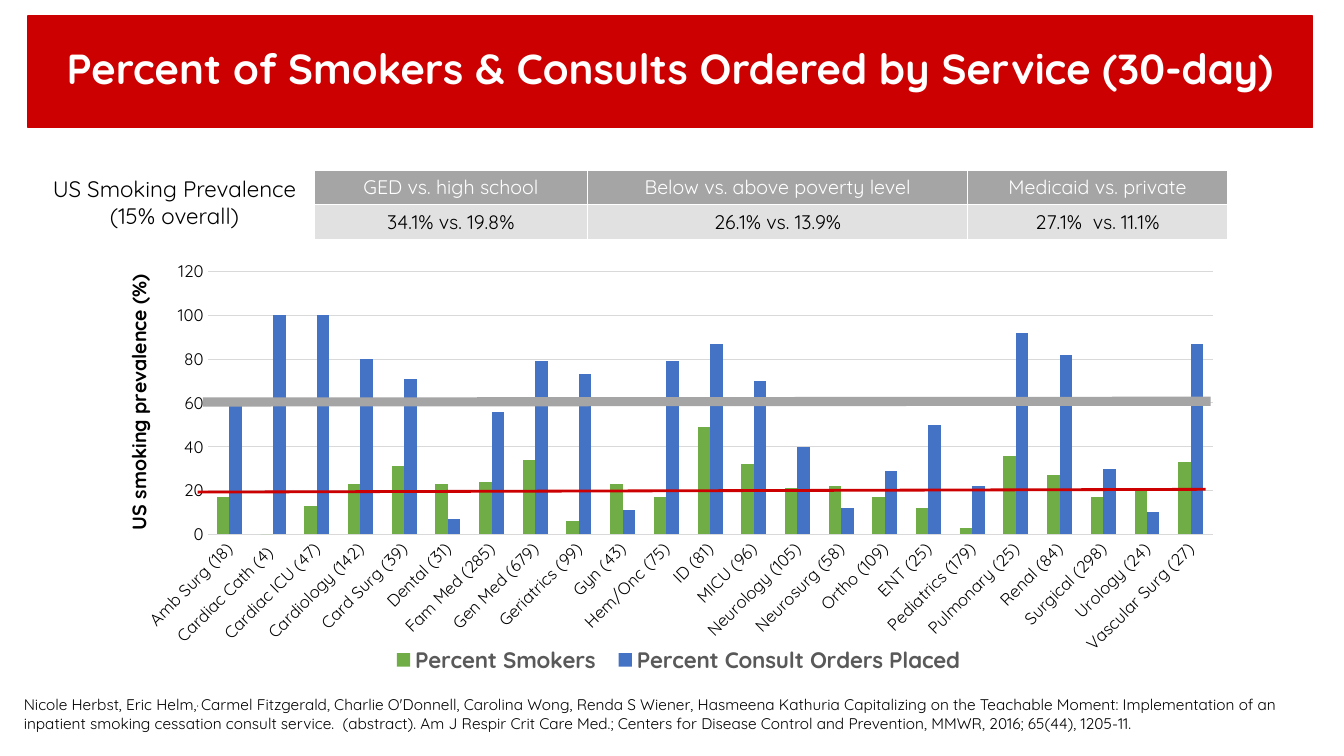
import lxml.etree
import pptx
import pptx.chart.data
import pptx.dml.color
import pptx.enum.chart
import pptx.enum.shapes
import pptx.enum.text
import pptx.oxml.ns
import pptx.util

Cm = pptx.util.Cm
Pt = pptx.util.Pt
RGBColor = pptx.dml.color.RGBColor
qn = pptx.oxml.ns.qn

RED = RGBColor(0xCC, 0x00, 0x00)
WHITE = RGBColor(0xFF, 0xFF, 0xFF)
BLACK = RGBColor(0x00, 0x00, 0x00)
GRAY = RGBColor(0xA5, 0xA5, 0xA5)
LIGHT_GRAY = RGBColor(0xE1, 0xE1, 0xE1)
GRID_GRAY = RGBColor(0xD9, 0xD9, 0xD9)
LEGEND_GRAY = RGBColor(0x59, 0x59, 0x59)
GREEN = RGBColor(0x70, 0xAD, 0x47)
BLUE = RGBColor(0x44, 0x72, 0xC4)
FONT = "Quicksand"
CENTER = pptx.enum.text.PP_ALIGN.CENTER
LEFT = pptx.enum.text.PP_ALIGN.LEFT
CHART_WIDTH = Cm(28.02)
CHART_HEIGHT = Cm(11.48)

SERVICES = [
    ("Amb Surg (18)", 17, 62), ("Cardiac Cath (4) ", 0, 100),
    ("Cardiac ICU (47)", 13, 100), ("Cardiology (142)", 23, 80),
    ("Card Surg (39)", 31, 71), ("Dental (31)", 23, 7),
    ("Fam Med (285)", 24, 56), ("Gen Med (679)", 34, 79),
    ("Geriatrics (99)", 6, 73), ("Gyn (43)", 23, 11),
    ("Hem/Onc (75)", 17, 79), ("ID (81)", 49, 87),
    ("MICU (96)", 32, 70), ("Neurology (105)", 21, 40),
    ("Neurosurg (58)", 22, 12), ("Ortho (109)", 17, 29),
    ("ENT (25)", 12, 50), ("Pediatrics (179)", 3, 22),
    ("Pulmonary (25)", 36, 92), ("Renal (84)", 27, 82),
    ("Surgical (298)", 17, 30), ("Urology (24)", 21, 10),
    ("Vascular Surg (27)", 33, 87),
]


def write_text(text_frame, text, size, color=BLACK, bold=False, align=CENTER):
    """Fill the frame with one paragraph per line; superscripts stand between carets."""
    text_frame.word_wrap = True
    for index, line in enumerate(text.split("\n")):
        paragraph = text_frame.paragraphs[0] if index == 0 else text_frame.add_paragraph()
        paragraph.alignment = align
        for part, words in enumerate(line.split("^")):
            run = paragraph.add_run()
            run.text = words
            run.font.name = FONT
            run.font.size = Pt(size)
            run.font.bold = bold
            run.font.color.rgb = color
            if part % 2:
                run.font._element.set("baseline", "30000")


def set_layout(chart_part, left, top, width, height):
    """Place a plot area or legend by lengths from the chart's corner."""
    for old_layout in chart_part.findall(qn("c:layout")):
        chart_part.remove(old_layout)
    layout = lxml.etree.Element(qn("c:layout"))
    manual = lxml.etree.SubElement(layout, qn("c:manualLayout"))
    if chart_part.tag == qn("c:plotArea"):
        lxml.etree.SubElement(manual, qn("c:layoutTarget"), val="inner")
        chart_part.insert(0, layout)
    else:
        chart_part.find(qn("c:legendPos")).addnext(layout)
    for mode in ("xMode", "yMode"):
        lxml.etree.SubElement(manual, qn("c:" + mode), val="edge")
    for name, length, whole in (("x", left, CHART_WIDTH), ("y", top, CHART_HEIGHT),
                                ("w", width, CHART_WIDTH), ("h", height, CHART_HEIGHT)):
        lxml.etree.SubElement(manual, qn("c:" + name), val=str(length / whole))


presentation = pptx.Presentation()
presentation.slide_width = Cm(33.87)
presentation.slide_height = Cm(19.05)
slide = presentation.slides.add_slide(presentation.slide_layouts[5])

# Title banner
title = slide.shapes.title
title.left, title.top, title.width, title.height = Cm(0.71), Cm(0.4), Cm(32.36), Cm(2.82)
title.fill.solid()
title.fill.fore_color.rgb = RED
title.line.color.rgb = RED
title.line.width = Pt(1)
title.text_frame.margin_bottom = Cm(0.18)
title.text_frame.vertical_anchor = pptx.enum.text.MSO_ANCHOR.MIDDLE
write_text(title.text_frame, "Percent of Smokers & Consults Ordered by Service (30-day)",
           30, color=WHITE, bold=True)
title.text_frame.paragraphs[0].line_spacing = 0.9

# Chart of services
chart_data = pptx.chart.data.CategoryChartData()
names, smokers, consults = zip(*SERVICES)
chart_data.categories = names
chart_data.add_series("Percent Smokers ", smokers)
chart_data.add_series("Percent Consult Orders Placed", consults)
chart = slide.shapes.add_chart(
    pptx.enum.chart.XL_CHART_TYPE.COLUMN_CLUSTERED,
    Cm(3.07), Cm(6.35), CHART_WIDTH, CHART_HEIGHT, chart_data).chart
chart.has_title = False
chart.font.name = FONT
chart.font.size = Pt(12)
chart.font.color.rgb = BLACK
plot = chart.plots[0]
plot.gap_width = 150
plot.overlap = 0
plot.vary_by_categories = False
for series, color in zip(plot.series, (GREEN, BLUE)):
    series.format.fill.solid()
    series.format.fill.fore_color.rgb = color
    series.invert_if_negative = False

for axis in (chart.category_axis, chart.value_axis):
    axis.major_tick_mark = pptx.enum.chart.XL_TICK_MARK.NONE
    axis.minor_tick_mark = pptx.enum.chart.XL_TICK_MARK.NONE
    axis.format.line.fill.background()
    axis.tick_labels.font.name = FONT
    axis.tick_labels.font.size = Pt(12)
    axis.tick_labels.font.color.rgb = BLACK
label_body = chart.category_axis._element.find(qn("c:txPr")).find(qn("a:bodyPr"))
label_body.set("rot", "-2700000")
label_body.set("vert", "horz")
chart.value_axis.minimum_scale = 0
chart.value_axis.maximum_scale = 120
chart.value_axis.major_unit = 20
gridline = chart.value_axis.major_gridlines.format.line
gridline.color.rgb = GRID_GRAY
gridline.width = Pt(0.75)

chart.has_legend = True
legend = chart.legend
legend.position = pptx.enum.chart.XL_LEGEND_POSITION.BOTTOM
legend.include_in_layout = False
legend.font.name = FONT
legend.font.size = Pt(16)
legend.font.bold = True
legend.font.color.rgb = LEGEND_GRAY
set_layout(chart._chartSpace.chart.plotArea, Cm(2.16), Cm(0.49), Cm(25.33), Cm(6.63))
set_layout(legend._element, Cm(6.7), Cm(9.79), Cm(14.66), Cm(0.98))

# Average lines and axis caption
AVERAGES = [
    (4.98, 12.4, 30.38, 12.33, RED, 2),
    (5.11, 10.13, 30.51, 10.11, GRAY, 6.5),
]
for left, start, right, end, color, width in AVERAGES:
    average = slide.shapes.add_connector(
        pptx.enum.shapes.MSO_CONNECTOR.STRAIGHT, Cm(left), Cm(start), Cm(right), Cm(end))
    average.line.color.rgb = color
    average.line.width = Pt(width)
    lxml.etree.SubElement(average._element.spPr, qn("a:effectLst"))

caption = slide.shapes.add_textbox(Cm(3.07), Cm(6.54), Cm(1.12), Cm(7.19))
write_text(caption.text_frame, "US smoking prevalence (%)", 14, bold=True)
caption.text_frame._txBody.bodyPr.set("vert", "vert270")

# Prevalence table
PREVALENCE = [
    ("GED vs. high school", "Below vs. above poverty level", "Medicaid vs. private"),
    ("34.1% vs. 19.8%", "26.1% vs. 13.9%", "27.1%  vs. 11.1%"),
]
ROW_COLORS = [(GRAY, WHITE), (LIGHT_GRAY, BLACK)]
table = slide.shapes.add_table(2, 3, Cm(7.92), Cm(4.29), Cm(23.01), Cm(1.74)).table
for column, width in zip(table.columns, (6.89, 9.58, 6.54)):
    column.width = Cm(width)
for row, texts, (fill_color, text_color) in zip(table.rows, PREVALENCE, ROW_COLORS):
    row.height = Cm(0.87)
    for cell, text in zip(row.cells, texts):
        cell.margin_top = cell.margin_bottom = Cm(0.08)
        cell.vertical_anchor = pptx.enum.text.MSO_ANCHOR.MIDDLE
        write_text(cell.text_frame, text, 14, color=text_color)
        properties = cell._tc.get_or_add_tcPr()
        for side in ("lnL", "lnR", "lnT", "lnB"):
            border = lxml.etree.SubElement(properties, qn("a:" + side), w=str(Pt(1)))
            border_fill = lxml.etree.SubElement(border, qn("a:solidFill"))
            lxml.etree.SubElement(border_fill, qn("a:srgbClr"), val=str(WHITE))
        cell.fill.solid()
        cell.fill.fore_color.rgb = fill_color

# Table label and citation
table_label = slide.shapes.add_textbox(Cm(0.87), Cm(4.29), Cm(7.06), Cm(1.63))
write_text(table_label.text_frame, "US Smoking Prevalence\n(15% overall)", 16)

citation = slide.shapes.add_textbox(Cm(0.35), Cm(17.4), Cm(33.5), Cm(1.19))
write_text(
    citation.text_frame,
    "Nicole Herbst, Eric Helm,^, ^Carmel Fitzgerald, Charlie O'Donnell, Carolina Wong, "
    "Renda S Wiener, Hasmeena Kathuria Capitalizing on the Teachable Moment: Implementation "
    "of an inpatient smoking cessation consult service.  (abstract). Am J Respir Crit Care "
    "Med.; Centers for Disease Control and Prevention, MMWR, 2016; 65(44), 1205-11.",
    11, align=LEFT)

presentation.save("out.pptx")
